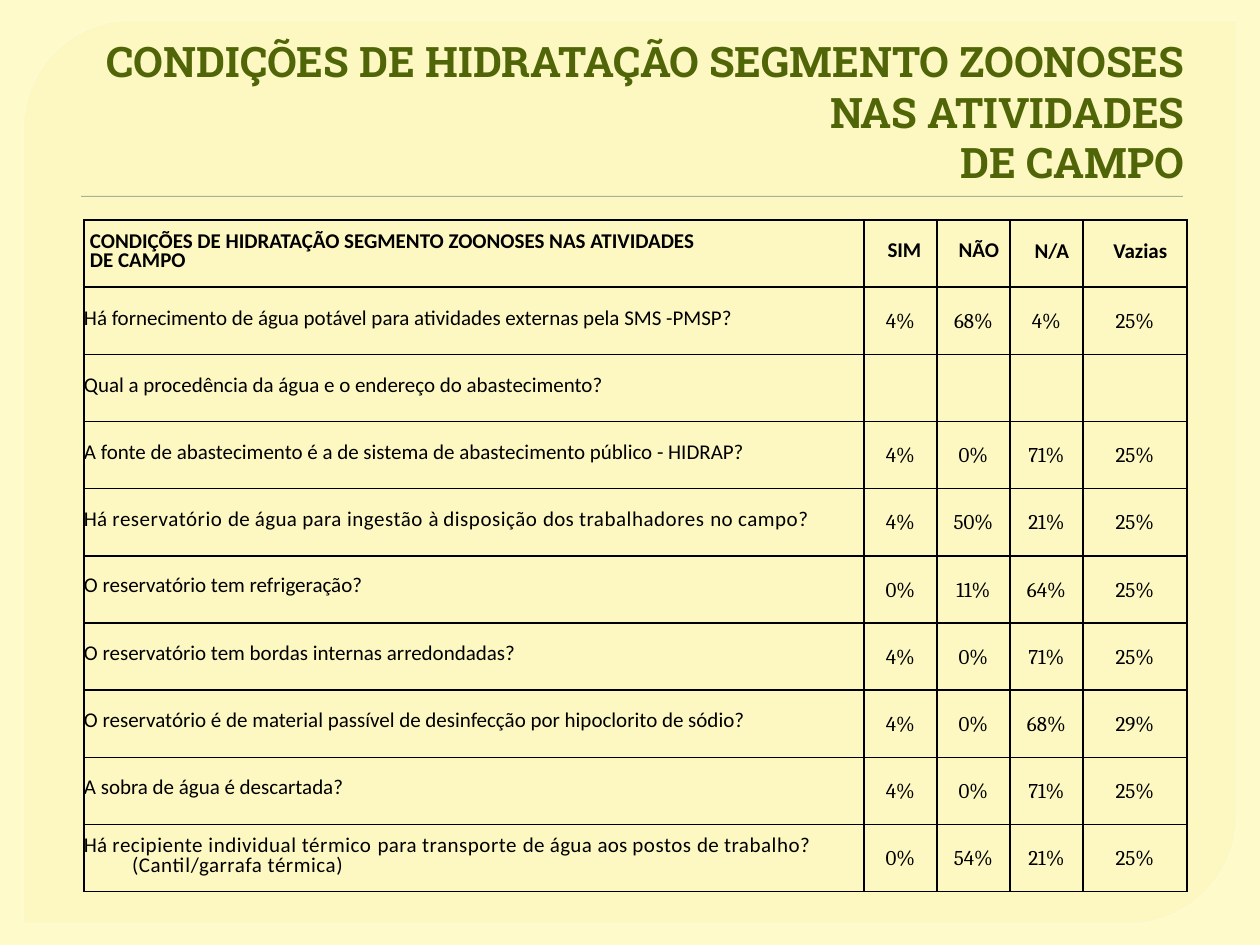
import dataclasses
import typing

import pptx
import pptx.dml.color
import pptx.enum.shapes
import pptx.enum.text
import pptx.oxml
import pptx.oxml.ns
import pptx.util

RGB = pptx.dml.color.RGBColor
ALIGN = pptx.enum.text.PP_ALIGN
ANCHOR = pptx.enum.text.MSO_ANCHOR
SHAPE = pptx.enum.shapes.MSO_SHAPE
Pt = pptx.util.Pt

CREAM = RGB(0xFE, 0xFA, 0xC9)
PANEL = RGB(0xFD, 0xF8, 0xBE)
EDGE = RGB(0xFF, 0xFC, 0xD6)
SAGE = RGB(0xA5, 0xB5, 0x92)
OLIVE = RGB(0x50, 0x65, 0x08)
BLACK = RGB(0, 0, 0)

HEAD = "CONDIÇÕES DE HIDRATAÇÃO SEGMENTO ZOONOSES NAS ATIVIDADES"
TAIL = "DE CAMPO"
WIDTHS = (780, 73, 73, 73, 104)
HEIGHT = 672


def px(n: int) -> int:
    """Turn pixels, 126 to the inch, into EMU."""
    return round(n * 914400 / 126)


@dataclasses.dataclass
class Style:
    font: str
    left: int
    first: int
    lead: typing.Any
    bold: bool = False
    align: typing.Any = ALIGN.LEFT


@dataclasses.dataclass
class Row:
    # Each part of the label is its text and its spacing in 1/100 pt
    label: list[tuple[str, int]]
    lead: float
    rates: tuple[int, ...] = ()


def plain(text: str, lead: float, *rates: int) -> Row:
    return Row([(text, 0)], lead, rates)


ROWS = [
    plain("Há fornecimento de água potável para atividades externas pela SMS -PMSP?",
          11.5, 4, 68, 4, 25),
    plain("Qual a procedência da água e o endereço do abastecimento?", 11.5),
    plain("A fonte de abastecimento é a de sistema de abastecimento público - HIDRAP?",
          11.4, 4, 0, 71, 25),
    Row([("Há ", 10), ("reservatório ", 30), ("de ", 10), ("água para ", 20),
         ("ingestão ", 30), ("à ", 0), ("disposição ", 30), ("dos ", 10),
         ("trabalhadores ", 30), ("no ", 20), ("campo?", 30)],
        11.4, (4, 50, 21, 25)),
    plain("O reservatório tem refrigeração?", 10.5, 0, 11, 64, 25),
    plain("O reservatório tem bordas internas arredondadas?", 10.5, 4, 0, 71, 25),
    plain("O reservatório é de material passível de desinfecção por hipoclorito de sódio?",
          10.5, 4, 0, 68, 29),
    plain("A sobra de água é descartada?", 10.5, 4, 0, 71, 25),
    Row([("Há ", 10), ("recipiente individual térmico ", 30), ("para ", 20),
         ("transporte ", 30), ("de água ", 20), ("aos ", 10), ("postos ", 30),
         ("de ", 10), ("trabalho? (Cantil/garrafa térmica)", 30)],
        11.5, (0, 54, 21, 25)),
]


def block(slide, kind, box: tuple[int, ...], color: RGB):
    shape = slide.shapes.add_shape(kind, *map(px, box))
    shape.shadow.inherit = False
    shape.fill.solid()
    shape.fill.fore_color.rgb = color
    shape.line.fill.background()
    return shape


def fade(shape, tag: str, share: int) -> None:
    """Set the opacity, in percent, of the fill or line colour."""
    color = shape._element.spPr.find(f"{tag}/a:srgbClr", pptx.oxml.ns._nsmap)
    alpha = pptx.oxml.parse_xml(
        f'<a:alpha {pptx.oxml.ns.nsdecls("a")} val="{share * 1000}"/>')
    color.append(alpha)


def write(para, parts: list[tuple[str, int]], style: Style) -> None:
    para.alignment = style.align
    para.line_spacing = style.lead
    props = para._p.get_or_add_pPr()
    props.set("marL", str(px(style.left)))
    props.set("indent", str(px(style.first)))
    font = para.font
    font.name, font.size, font.bold = style.font, Pt(12), style.bold
    font.color.rgb = BLACK
    for text, space in parts:
        run = para.add_run()
        run.text = text
        if space:
            run._r.get_or_add_rPr().set("spc", str(space))


def frame(cell) -> None:
    """Clear the cell's fill and margins and rule its four sides."""
    cell.fill.background()
    cell.vertical_anchor = ANCHOR.MIDDLE
    cell.margin_left = cell.margin_right = 0
    cell.margin_top = cell.margin_bottom = 0
    props = cell._tc.get_or_add_tcPr()
    for spot, side in enumerate("LRTB"):
        props.insert(spot, pptx.oxml.parse_xml(
            f'<a:ln{side} {pptx.oxml.ns.nsdecls("a")} w="12700"><a:solidFill>'
            f'<a:srgbClr val="{BLACK}"/></a:solidFill></a:ln{side}>'))


def grid(slide) -> None:
    count = len(ROWS) + 1
    table = slide.shapes.add_table(
        count, len(WIDTHS), px(84), px(220), px(sum(WIDTHS)), px(HEIGHT)).table
    table.first_row = table.horz_banding = False
    for col, width in zip(table.columns, WIDTHS):
        col.width = px(width)
    for row in table.rows:
        row.height = px(HEIGHT) // count
    for cell in table.iter_cells():
        frame(cell)

    # Header row
    body = table.cell(0, 0).text_frame
    write(body.paragraphs[0], [(HEAD, 0)], Style("Calibri", 38, -32, Pt(11.2), True))
    write(body.add_paragraph(), [(TAIL, 0)], Style("Calibri", 38, -32, Pt(10.8), True))
    heads = (("SIM", 40, 11.3), ("NÃO", 43, 11.3), ("N/A", 43, 11.5), ("Vazias", 43, 11.5))
    for col, (name, left, lead) in enumerate(heads, 1):
        write(table.cell(0, col).text_frame.paragraphs[0], [(name, 0)],
              Style("Calibri", left, -32, Pt(lead), True, ALIGN.CENTER))

    # Questions and their rates
    rate = Style("Cambria", 32, -32, 1.07, align=ALIGN.CENTER)
    for line, row in enumerate(ROWS, 1):
        write(table.cell(line, 0).text_frame.paragraphs[0], row.label,
              Style("Calibri", 48, -48, Pt(row.lead)))
        for col, value in enumerate(row.rates, 1):
            write(table.cell(line, col).text_frame.paragraphs[0],
                  [(f"{value}%", 0)], rate)


def title(slide) -> None:
    body = slide.shapes.add_textbox(px(63), px(35), px(1134), px(158)).text_frame
    body.word_wrap = True
    body.vertical_anchor = ANCHOR.BOTTOM
    para = body.paragraphs[0]
    para.text = f"{HEAD}\v{TAIL}"
    para.alignment = ALIGN.RIGHT
    para._p.get_or_add_pPr().set("marL", str(px(8)))
    font = para.font
    font.name, font.size, font.bold = "Roboto Slab", Pt(24), True
    font.color.rgb = OLIVE


def main() -> None:
    deck = pptx.Presentation()
    deck.slide_width, deck.slide_height = px(1260), px(945)
    slide = deck.slides.add_slide(deck.slide_layouts[6])
    slide.background.fill.solid()
    slide.background.fill.fore_color.rgb = CREAM

    # Backdrop panel and rule under the title
    panel = block(slide, SHAPE.ROUND_2_DIAG_RECTANGLE, (23, 20, 1214, 904), PANEL)
    panel.adjustments[0] = 0.12
    panel.line.color.rgb = EDGE
    panel.line.width = Pt(0.87)
    fade(panel, "a:solidFill", 65)
    fade(panel, "a:ln/a:solidFill", 88)
    block(slide, SHAPE.RECTANGLE, (81, 196, 1102, 1), SAGE)

    grid(slide)
    title(slide)
    deck.save("out.pptx")


if __name__ == "__main__":
    main()
